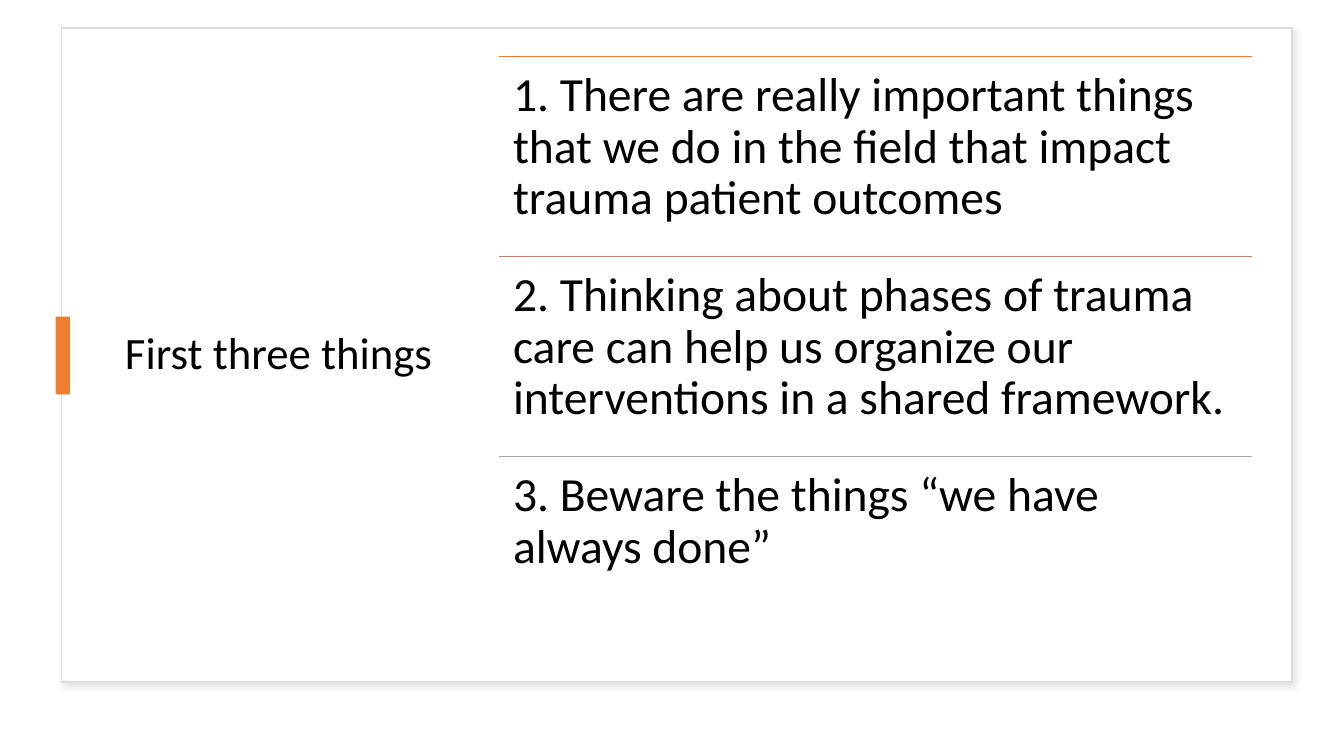
from lxml import etree
from pptx import Presentation
from pptx import util as u
from pptx.dml.color import RGBColor
from pptx.enum import shapes, text
from pptx.oxml import parse_xml
from pptx.oxml.ns import nsdecls, qn

WHITE = RGBColor(0xFF, 0xFF, 0xFF)
BLACK = RGBColor(0, 0, 0)
EDGE = RGBColor(0xDE, 0xDE, 0xDE)
SHADE = RGBColor(0xC5, 0xC3, 0xC3)
ORANGE = RGBColor(0xED, 0x7D, 0x31)
ROSE = RGBColor(0xC4, 0x81, 0x70)
GRAY = RGBColor(0xA5, 0xA5, 0xA5)

POINTS = [
    (ORANGE, "1. There are really important things that we do in the field "
             "that impact trauma patient outcomes"),
    (ROSE, "2. Thinking about phases of trauma care can help us organize our "
           "interventions in a shared framework."),
    (GRAY, "3. Beware the things “we have always done”"),
]
LEFT, TOP, WIDTH, STEP = 12.57, 1.42, 18.97, 5.04


class Page:
    font = "Calibri"

    def __init__(self, slide):
        self.shapes = slide.shapes

    def rect(self, x, y, w, h, fill, line=None):
        box = self.shapes.add_shape(shapes.MSO_SHAPE.RECTANGLE,
                                    u.Cm(x), u.Cm(y), u.Cm(w), u.Cm(h))
        box.shadow.inherit = False
        box.fill.solid()
        box.fill.fore_color.rgb = fill
        if line is None:
            box.line.fill.background()
        else:
            box.line.color.rgb = line
            box.line.width = u.Pt(1)
        return box

    def shade(self, box, color):
        """Give the box a soft shadow to the lower right."""
        effects = box._element.spPr.find(qn("a:effectLst"))
        effects.append(parse_xml(
            f'<a:outerShdw {nsdecls("a")} blurRad="{u.Pt(4)}" dist="{u.Pt(3)}" '
            f'dir="2700000" algn="tl" rotWithShape="0"><a:srgbClr val="{color}">'
            '<a:alpha val="50000"/></a:srgbClr></a:outerShdw>'))

    def rule(self, x, y, w, color):
        line = self.shapes.add_connector(shapes.MSO_CONNECTOR.STRAIGHT,
                                         u.Cm(x), u.Cm(y), u.Cm(x + w), u.Cm(y))
        line.line.color.rgb = color
        line.line.width = u.Pt(1)
        etree.SubElement(line._element.spPr, qn("a:effectLst"))

    def words(self, x, y, w, h, words, size, pad=None,
              anchor=text.MSO_ANCHOR.TOP):
        frame = self.shapes.add_textbox(u.Cm(x), u.Cm(y),
                                        u.Cm(w), u.Cm(h)).text_frame
        frame.word_wrap = True
        frame.vertical_anchor = anchor
        if pad is not None:
            frame.margin_left = frame.margin_right = u.Cm(pad)
            frame.margin_top = frame.margin_bottom = u.Cm(pad)
        para = frame.paragraphs[0]
        para.text = words
        para.line_spacing = 0.9
        para.font.name = self.font
        para.font.size = u.Pt(size)
        para.font.color.rgb = BLACK


def main():
    deck = Presentation()
    deck.slide_width, deck.slide_height = u.Cm(33.87), u.Cm(19.05)
    page = Page(deck.slides.add_slide(deck.slide_layouts[6]))

    card = page.rect(1.55, 0.71, 31.01, 16.48, WHITE, EDGE)
    page.shade(card, SHADE)
    page.words(2.9, 1.4, 8.31, 15.11, "First three things", 32,
               anchor=text.MSO_ANCHOR.MIDDLE)
    page.rect(1.4, 7.98, 0.36, 1.96, ORANGE)

    for row, (color, words) in enumerate(POINTS):
        y = TOP + row * STEP
        page.rule(LEFT, y, WIDTH, color)
        page.words(LEFT, y, WIDTH, STEP, words, 34, pad=0.36)

    deck.save("out.pptx")


if __name__ == "__main__":
    main()
